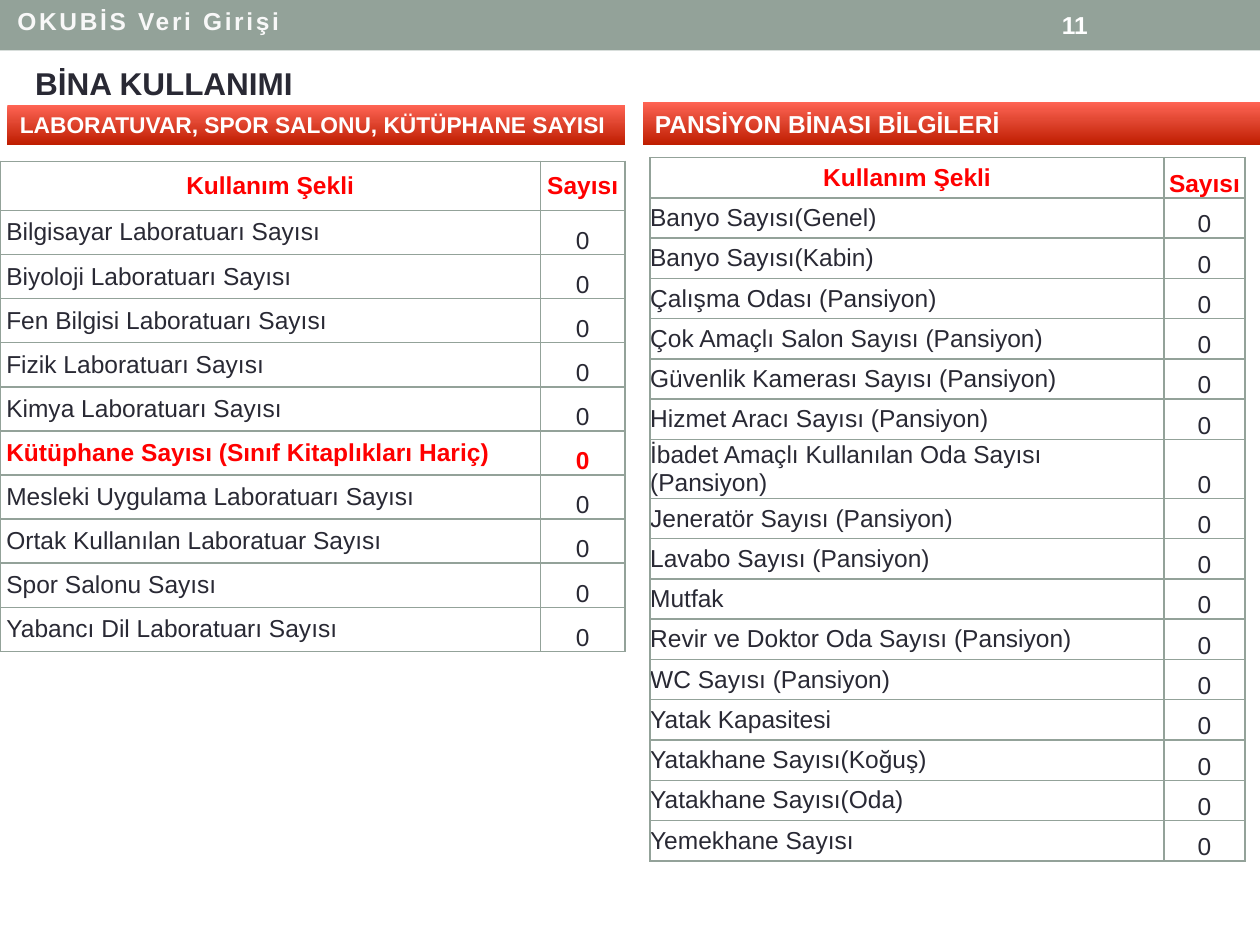
import copy

import pptx
import pptx.dml.color
import pptx.enum.shapes
import pptx.enum.text
import pptx.oxml
import pptx.oxml.ns
import pptx.util

Inches = pptx.util.Inches
Pt = pptx.util.Pt
ALIGN = pptx.enum.text.PP_ALIGN
ANCHOR = pptx.enum.text.MSO_ANCHOR

COLORS = {
    "sage": "93A299",
    "ink": "292934",
    "red": "FF0000",
    "white": "FFFFFF",
    "off_white": "F8F8F8",
}
BANNER_STOPS = [(0, "FF6454"), (0.4, "E34934"), (1, "BF1D00")]

LAB_ROOMS = [
    "Bilgisayar Laboratuarı Sayısı",
    "Biyoloji Laboratuarı Sayısı",
    "Fen Bilgisi Laboratuarı Sayısı",
    "Fizik Laboratuarı Sayısı",
    "Kimya Laboratuarı Sayısı",
    "Kütüphane Sayısı (Sınıf Kitaplıkları Hariç)",
    "Mesleki Uygulama Laboratuarı Sayısı",
    "Ortak Kullanılan Laboratuar Sayısı",
    "Spor Salonu Sayısı",
    "Yabancı Dil Laboratuarı Sayısı",
]
LIBRARY = LAB_ROOMS[5]
DORMITORY_ROOMS = [
    "Banyo Sayısı(Genel)",
    "Banyo Sayısı(Kabin)",
    "Çalışma Odası (Pansiyon)",
    "Çok Amaçlı Salon Sayısı (Pansiyon)",
    "Güvenlik Kamerası Sayısı (Pansiyon)",
    "Hizmet Aracı Sayısı (Pansiyon)",
    "İbadet Amaçlı Kullanılan Oda Sayısı (Pansiyon)",
    "Jeneratör Sayısı (Pansiyon)",
    "Lavabo Sayısı (Pansiyon)",
    "Mutfak",
    "Revir ve Doktor Oda Sayısı (Pansiyon)",
    "WC Sayısı (Pansiyon)",
    "Yatak Kapasitesi",
    "Yatakhane Sayısı(Koğuş)",
    "Yatakhane Sayısı(Oda)",
    "Yemekhane Sayısı",
]


def rgb(hex_color):
    return pptx.dml.color.RGBColor.from_string(hex_color)


def write(frame, text, size=14, color="ink", bold=False, align=ALIGN.LEFT, spacing=None):
    paragraph = frame.paragraphs[0]
    paragraph.alignment = align
    run = paragraph.add_run()
    run.text = text
    run.font.name = "Arial"
    run.font.size = Pt(size)
    run.font.bold = bold
    run.font.color.rgb = rgb(COLORS[color])
    if spacing:
        run.font._element.set("spc", str(round(spacing * 100)))


def add_label(slide, box, text, anchor=ANCHOR.TOP, wrap=True, **text_format):
    frame = slide.shapes.add_textbox(*map(Inches, box)).text_frame
    frame.word_wrap = wrap
    frame.vertical_anchor = anchor
    write(frame, text, **text_format)


def add_bar(slide, box):
    bar = slide.shapes.add_shape(pptx.enum.shapes.MSO_SHAPE.RECTANGLE, *map(Inches, box))
    bar.shadow.inherit = False
    bar.line.fill.background()
    return bar


def add_header(slide, box):
    left, top, width, height = box
    bar = add_bar(slide, box)
    bar.fill.solid()
    bar.fill.fore_color.rgb = rgb(COLORS["sage"])
    add_label(slide, (left + 8.33, top + 0.02, 1.17, height - 0.04), "11",
              anchor=ANCHOR.MIDDLE, color="white", bold=True)
    add_label(slide, (left + 0.04, top, 2.32, 0.34), "OKUBİS Veri Girişi",
              wrap=False, color="off_white", bold=True, spacing=1.5)


def add_banner(slide, box, text, size):
    banner = add_bar(slide, box)
    banner.fill.gradient()
    banner.fill.gradient_angle = 270
    first_stop = banner.fill.gradient_stops[0]._gs
    first_stop.addnext(copy.deepcopy(first_stop))
    for stop, (position, color) in zip(banner.fill.gradient_stops, BANNER_STOPS):
        stop.position = position
        stop.color.rgb = rgb(color)
    frame = banner.text_frame
    frame.word_wrap = True
    frame.vertical_anchor = ANCHOR.MIDDLE
    write(frame, text, size=size, color="white", bold=True)


def add_borders(cell):
    properties = cell._tc.get_or_add_tcPr()
    for index, side in enumerate(("lnL", "lnR", "lnT", "lnB")):
        border = pptx.oxml.parse_xml(
            f'<a:{side} {pptx.oxml.ns.nsdecls("a")} w="{Pt(1)}"><a:solidFill>'
            f'<a:srgbClr val="{COLORS["sage"]}"/></a:solidFill></a:{side}>')
        properties.insert(index, border)


def fill_cell(cell, text, anchor, indent=0, **text_format):
    cell.margin_left = Inches(indent)
    cell.margin_right = cell.margin_top = cell.margin_bottom = 0
    cell.vertical_anchor = anchor
    cell.fill.background()
    add_borders(cell)
    write(cell.text_frame, text, **text_format)


def add_count_table(slide, box, rooms, count_width, header_height, row_height,
                    count_header_anchor, indent=0, highlighted=None):
    """Table of room kinds, each with a count of zero."""
    left, top, width = box
    height = header_height + row_height * len(rooms)
    table = slide.shapes.add_table(
        len(rooms) + 1, 2, *map(Inches, (left, top, width, height))).table
    table.first_row = table.horz_banding = False
    table.columns[0].width = Inches(width - count_width)
    table.columns[1].width = Inches(count_width)
    for row in table.rows:
        row.height = Inches(row_height)
    table.rows[0].height = Inches(header_height)

    header = dict(color="red", bold=True, align=ALIGN.CENTER)
    fill_cell(table.cell(0, 0), "Kullanım Şekli", ANCHOR.MIDDLE, **header)
    fill_cell(table.cell(0, 1), "Sayısı", count_header_anchor, **header)
    for row, room in enumerate(rooms, start=1):
        marked = room == highlighted
        emphasis = dict(color="red" if marked else "ink", bold=marked)
        fill_cell(table.cell(row, 0), room, ANCHOR.MIDDLE, indent=indent, **emphasis)
        fill_cell(table.cell(row, 1), "0", ANCHOR.BOTTOM, align=ALIGN.CENTER, **emphasis)


def main():
    deck = pptx.Presentation()
    deck.slide_width, deck.slide_height = Inches(10), Inches(7.5)
    slide = deck.slides.add_slide(deck.slide_layouts[6])

    add_header(slide, (0, 0, 10, 0.4))
    add_count_table(slide, (0, 1.28, 4.96), LAB_ROOMS, count_width=0.67,
                    header_height=0.39, row_height=0.35,
                    count_header_anchor=ANCHOR.MIDDLE, indent=0.05, highlighted=LIBRARY)
    add_count_table(slide, (5.16, 1.25, 4.72), DORMITORY_ROOMS, count_width=0.64,
                    header_height=0.32, row_height=0.32,
                    count_header_anchor=ANCHOR.BOTTOM)
    add_banner(slide, (0.06, 0.83, 4.9, 0.32),
               "LABORATUVAR, SPOR SALONU, KÜTÜPHANE SAYISI", size=13)
    add_banner(slide, (5.1, 0.81, 4.9, 0.34), "PANSİYON BİNASI BİLGİLERİ", size=14)
    add_label(slide, (0.18, 0.46, 2.61, 1.01), "BİNA KULLANIMI", size=18, bold=True)

    deck.save("out.pptx")


if __name__ == "__main__":
    main()
